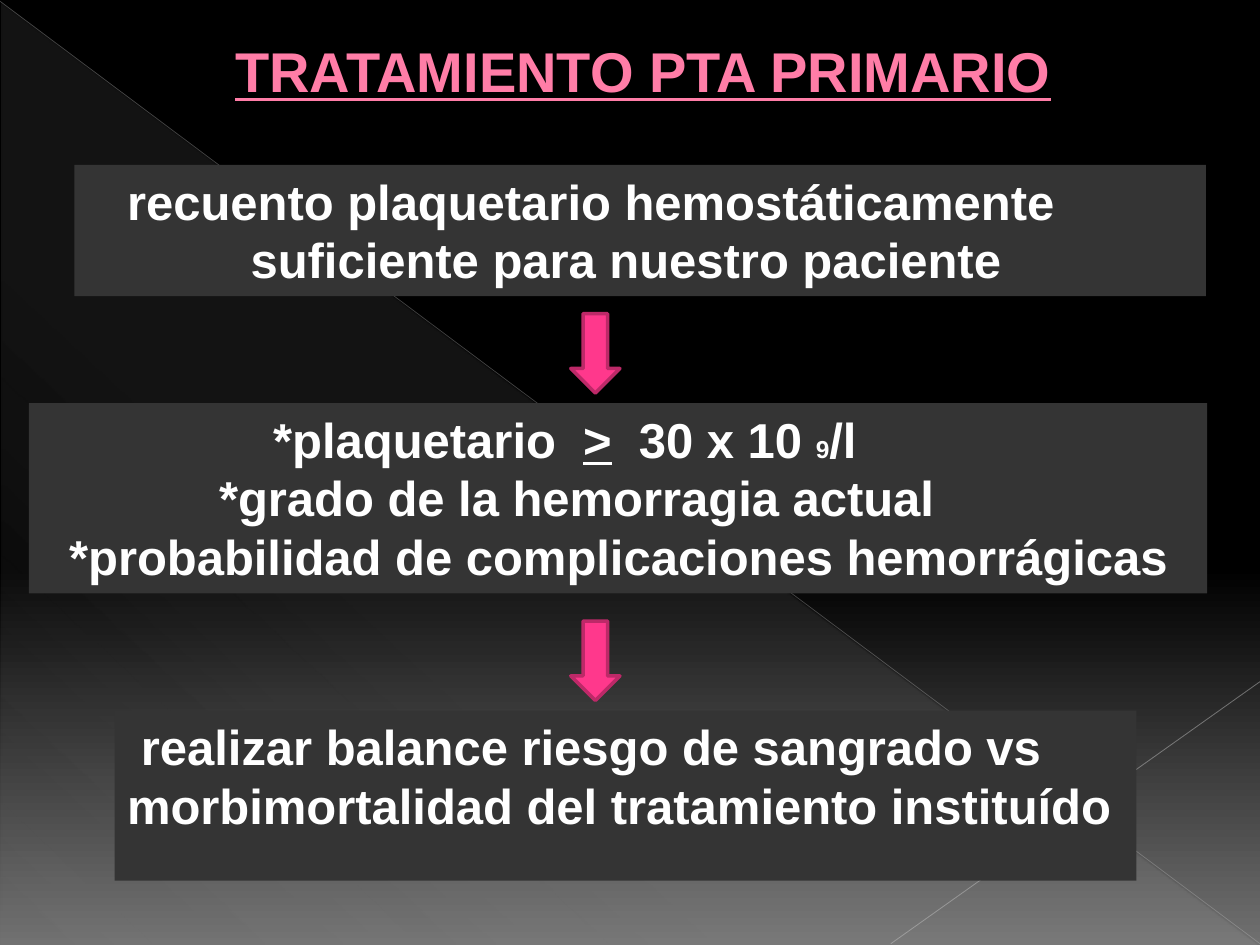
from copy import deepcopy
from dataclasses import dataclass

from lxml import etree
from pptx import Presentation
from pptx.dml.color import RGBColor
from pptx.enum.shapes import MSO_CONNECTOR, MSO_SHAPE
from pptx.enum.text import MSO_ANCHOR, PP_ALIGN
from pptx.oxml.ns import qn
from pptx.util import Inches, Pt

RECT = MSO_SHAPE.RECTANGLE
TRIANGLE = MSO_SHAPE.RIGHT_TRIANGLE
DOWN_ARROW = MSO_SHAPE.DOWN_ARROW
STRAIGHT = MSO_CONNECTOR.STRAIGHT
TOP, MIDDLE = MSO_ANCHOR.TOP, MSO_ANCHOR.MIDDLE
LEFT = PP_ALIGN.LEFT


@dataclass(frozen=True)
class Theme:
    """Colours, font and type sizes of the slide."""
    font: str = "Arial"
    black: str = "000000"
    floor: str = "707070"
    haze: str = "D2D2D2"
    diagonal: str = "BFBFBF"
    corner: str = "C6C6C6"
    panel: str = "343434"
    text: str = "FFFFFF"
    title: str = "FF7DA7"
    arrow: str = "FF388C"
    arrow_edge: str = "BD2968"
    title_size: float = 32
    body_size: float = 28
    exponent_size: float = 14
    leading: float = 33.5


THEME = Theme()


def rgb(value):
    """Turn a hex string into a colour."""
    return RGBColor.from_string(value)


def set_alpha(root, percent):
    """Set the opacity of every colour under an element."""
    for color in root.iter(qn("a:srgbClr")):
        etree.SubElement(color, qn("a:alpha")).set("val", str(percent * 1000))


def set_gradient(fill, root, stops, angle):
    """Give a fill a linear gradient of (position, colour, opacity) stops."""
    fill.gradient()
    fill.gradient_angle = angle
    gs_list = next(root.iter(qn("a:gsLst")))
    while len(gs_list) < len(stops):
        gs_list.append(deepcopy(gs_list[-1]))
    for stop, gs, (position, color, alpha) in zip(fill.gradient_stops, gs_list, stops):
        stop.position = position
        stop.color.rgb = rgb(color)
        if alpha < 100:
            set_alpha(gs, alpha)


def add_preset(s, kind, box):
    """Add a preset shape without shadow or line in a box."""
    sp = s.shapes.add_shape(kind, *map(Inches, box))
    sp.shadow.inherit = False
    sp.line.fill.background()
    return sp


def add_line(s, start, end, color, width, alpha):
    """Add a thin translucent line between two points."""
    line = s.shapes.add_connector(STRAIGHT, *map(Inches, start + end))
    line.line.color.rgb = rgb(color)
    line.line.width = Pt(width)
    sp_pr = line._element.spPr
    set_alpha(sp_pr, alpha)
    etree.SubElement(sp_pr, qn("a:effectLst"))


def write_runs(p, runs, color, size, indent=0, leading=None):
    """Write bold (text, format) runs into an indented paragraph."""
    p.alignment = LEFT
    p.line_spacing = Pt(leading) if leading else None
    p._p.get_or_add_pPr().set("marL", str(Inches(indent)))
    for text, style in runs:
        r = p.add_run()
        r.text = text
        r.font.name = THEME.font
        r.font.bold = True
        r.font.size = Pt(style.get("size", size))
        r.font.underline = style.get("underline", False)
        r.font.color.rgb = rgb(color)


def add_backdrop(s, width, height):
    """Draw the gradient, the diagonal haze and the thin lines."""
    set_gradient(s.background.fill, s._element,
                 [(0.6, THEME.black, 100), (1, THEME.floor, 100)], 270)
    haze = add_preset(s, TRIANGLE, (0.01, 0.02, width - 0.02, height - 0.02))
    set_gradient(haze.fill, haze._element,
                 [(0, THEME.haze, 10), (0.7, THEME.haze, 8), (1, THEME.haze, 1)], 227)
    add_line(s, (0, 0.01), (width, height - 0.01), THEME.diagonal, 0.39, 35)
    add_line(s, (width, 5.41), (7.07, height - 0.01), THEME.corner, 0.47, 45)


def add_title(s, box, text, indent):
    """Write the underlined title in a box."""
    tf = s.shapes.add_textbox(*map(Inches, box)).text_frame
    tf.word_wrap = True
    tf.vertical_anchor = MIDDLE
    write_runs(tf.paragraphs[0], [(text, {"underline": True})],
               THEME.title, THEME.title_size, indent)


def add_panel(s, box, lines):
    """Draw a grey panel with (indent, runs) lines."""
    sp = add_preset(s, RECT, box)
    sp.fill.solid()
    sp.fill.fore_color.rgb = rgb(THEME.panel)
    tf = sp.text_frame
    tf.word_wrap = True
    tf.vertical_anchor = TOP
    for i, (indent, runs) in enumerate(lines):
        p = tf.add_paragraph() if i else tf.paragraphs[0]
        write_runs(p, runs, THEME.text, THEME.body_size, indent, THEME.leading)


def add_arrow(s, box):
    """Draw a pink arrow that leads to the next panel."""
    sp = add_preset(s, DOWN_ARROW, box)
    sp.fill.solid()
    sp.fill.fore_color.rgb = rgb(THEME.arrow)
    sp.line.color.rgb = rgb(THEME.arrow_edge)
    sp.line.width = Pt(2)


def main():
    """Build and save the slide."""
    prs = Presentation()
    prs.slide_width, prs.slide_height = Inches(10), Inches(7.5)
    s = prs.slides.add_slide(prs.slide_layouts[6])
    add_backdrop(s, 10, 7.5)
    add_title(s, (0.5, 0.05, 9, 1.02), "TRATAMIENTO PTA PRIMARIO", 1.27)
    panels = [
        ((0.59, 1.31, 8.98, 1.04), [
            (0.32, [("recuento plaquetario hemostáticamente", {})]),
            (1.3, [("suficiente para nuestro paciente", {})]),
        ]),
        ((0.23, 3.2, 9.35, 1.51), [
            (1.84, [("*plaquetario  ", {}), (">", {"underline": True}),
                    ("  30 x 10 ", {}), ("9", {"size": THEME.exponent_size}),
                    ("/l", {})]),
            (1.41, [("*grado de la hemorragia actual", {})]),
            (0.22, [("*probabilidad de complicaciones hemorrágicas", {})]),
        ]),
        ((0.91, 5.64, 8.11, 1.35), [
            (0.11, [("realizar balance riesgo de sangrado vs", {})]),
            (0, [("morbimortalidad del tratamiento instituído", {})]),
        ]),
    ]
    for box, lines in panels:
        add_panel(s, box, lines)
    for top in (2.49, 4.93):
        add_arrow(s, (4.53, top, 0.39, 0.63))
    prs.save("out.pptx")


if __name__ == "__main__":
    main()
